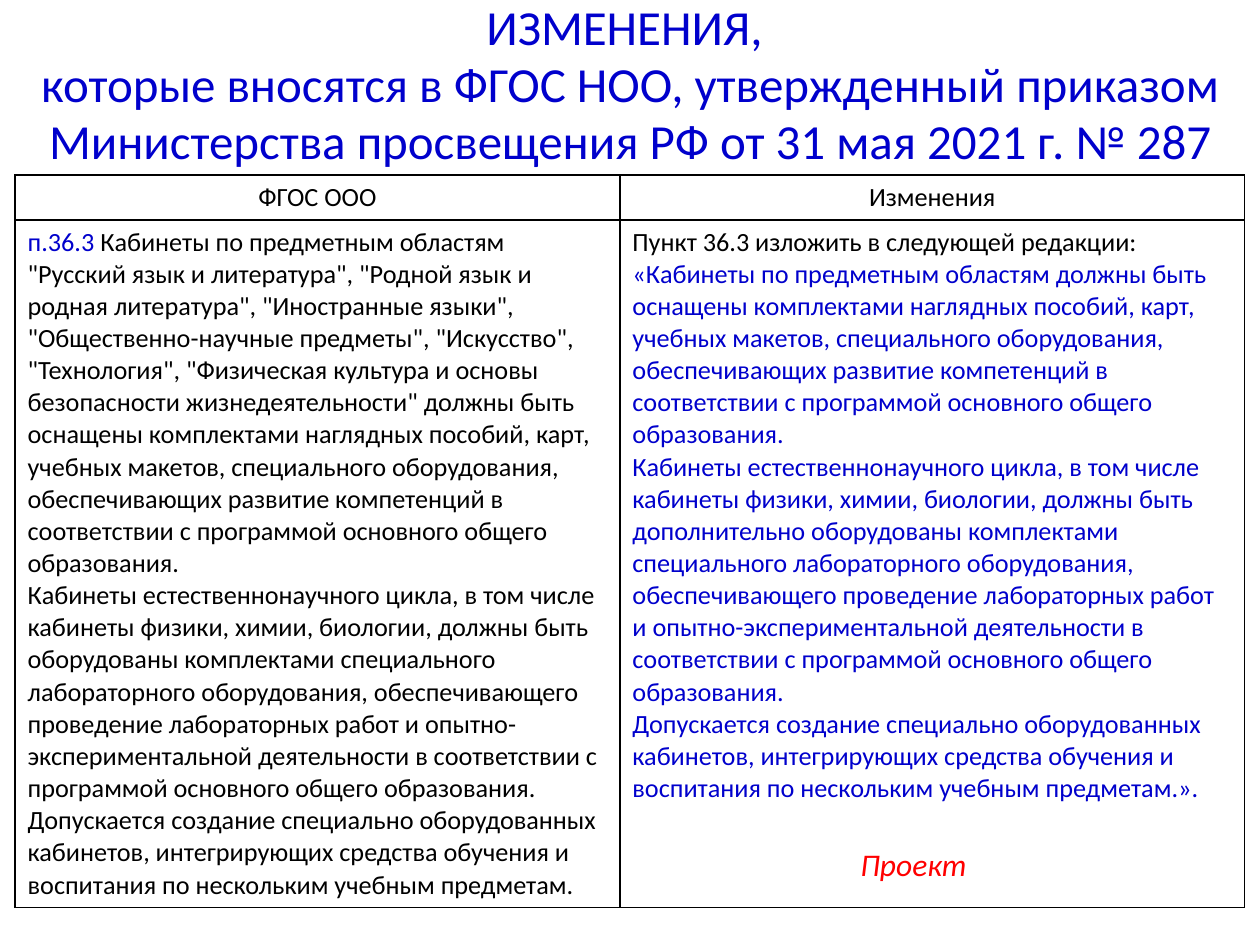
import pptx
import pptx.dml.color
import pptx.enum.text
import pptx.oxml
import pptx.oxml.ns
import pptx.util

Pt = pptx.util.Pt
ALIGN = pptx.enum.text.PP_ALIGN
ANCHOR = pptx.enum.text.MSO_ANCHOR
AUTO_SIZE = pptx.enum.text.MSO_AUTO_SIZE

FONT = "Calibri"
COLORS = {"text": "000000", "accent": "0000CC", "draft": "FF0000", "border": "000000"}

TITLE = (
    "ИЗМЕНЕНИЯ, \vкоторые вносятся в ФГОС НОО, утвержденный приказом "
    "Министерства просвещения РФ от 31 мая 2021 г. № 287"
)
HEADERS = ["ФГОС ООО", "Изменения"]

# Each paragraph is a list of (text, colour) runs
CURRENT = [
    [
        ("п.36.3 ", "accent"),
        (
            'Кабинеты по предметным областям "Русский язык и литература", '
            '"Родной язык и родная литература", "Иностранные языки", '
            '"Общественно-научные предметы", "Искусство", "Технология", '
            '"Физическая культура и основы безопасности жизнедеятельности" '
            "должны быть оснащены комплектами наглядных пособий, карт, учебных "
            "макетов, специального оборудования, обеспечивающих развитие "
            "компетенций в соответствии с программой основного общего образования.",
            "text",
        ),
    ],
    [(
        "Кабинеты естественнонаучного цикла, в том числе кабинеты физики, химии, "
        "биологии, должны быть оборудованы комплектами специального лабораторного "
        "оборудования, обеспечивающего проведение лабораторных работ и "
        "опытно-экспериментальной деятельности в соответствии с программой "
        "основного общего образования.",
        "text",
    )],
    [(
        "Допускается создание специально оборудованных кабинетов, интегрирующих "
        "средства обучения и воспитания по нескольким учебным предметам.",
        "text",
    )],
]
CHANGED = [
    [("Пункт 36.3 изложить в следующей редакции:", "text")],
    [(
        "«Кабинеты по предметным областям должны быть оснащены комплектами "
        "наглядных пособий, карт, учебных макетов, специального оборудования, "
        "обеспечивающих развитие компетенций в соответствии с программой "
        "основного общего образования.",
        "accent",
    )],
    [(
        "Кабинеты естественнонаучного цикла, в том числе кабинеты физики, химии, "
        "биологии, должны быть дополнительно оборудованы комплектами специального "
        "лабораторного оборудования, обеспечивающего проведение лабораторных работ "
        "\vи опытно-экспериментальной деятельности в соответствии с программой "
        "основного общего образования.",
        "accent",
    )],
    [(
        "Допускается создание специально оборудованных кабинетов, интегрирующих "
        "средства обучения и воспитания по нескольким учебным предметам.».",
        "accent",
    )],
]


def rgb(name):
    return pptx.dml.color.RGBColor.from_string(COLORS[name])


def place(sp, left, top, width, height):
    sp.left, sp.top, sp.width, sp.height = Pt(left), Pt(top), Pt(width), Pt(height)


def format_paragraph(p, size, color=None, align=ALIGN.LEFT, italic=False):
    p.alignment = align
    p.font.name, p.font.size, p.font.italic = FONT, Pt(size), italic
    if color:
        p.font.color.rgb = rgb(color)


def add_runs(p, runs):
    for text, color in runs:
        for i, part in enumerate(text.split("\v")):
            if i:
                p.add_line_break()
            r = p.add_run()
            r.text = part
            r.font.color.rgb = rgb(color)


def set_borders(cell, width):
    tc_pr = cell._tc.get_or_add_tcPr()
    for i, side in enumerate(("lnL", "lnR", "lnT", "lnB")):
        ln = pptx.oxml.parse_xml(
            f'<a:{side} {pptx.oxml.ns.nsdecls("a")} w="{Pt(width)}"><a:solidFill>'
            f'<a:srgbClr val="{COLORS["border"]}"/></a:solidFill></a:{side}>'
        )
        tc_pr.insert(i, ln)


def fill_cell(cell, paragraphs, align):
    cell.fill.background()
    set_borders(cell, 1)
    tf = cell.text_frame
    for i, runs in enumerate(paragraphs):
        p = tf.add_paragraph() if i else tf.paragraphs[0]
        format_paragraph(p, 15, align=align)
        add_runs(p, runs)


def add_title(s):
    sp = s.shapes.title
    place(sp, 0, 3.6, 720, 90.7)
    tf = sp.text_frame
    tf.text = TITLE
    tf.auto_size = AUTO_SIZE.NONE
    tf.vertical_anchor = ANCHOR.MIDDLE
    p = tf.paragraphs[0]
    format_paragraph(p, 28, "accent", ALIGN.CENTER)
    p.line_spacing = 0.97


def add_comparison(s):
    frame = s.shapes.add_table(2, 2, Pt(8.6), Pt(100), Pt(702.7), Pt(410.4))
    table = frame.table
    table.first_row = table.horz_banding = False
    for column, width in zip(table.columns, (345.6, 357.1)):
        column.width = Pt(width)
    for row, height in zip(table.rows, (22.4, 388)):
        row.height = Pt(height)
    for col, (header, body) in enumerate(zip(HEADERS, (CURRENT, CHANGED))):
        fill_cell(table.cell(0, col), [[(header, "text")]], ALIGN.CENTER)
        fill_cell(table.cell(1, col), body, ALIGN.LEFT)


def add_draft_mark(s):
    sp = s.shapes.add_textbox(Pt(484.6), Pt(479.5), Pt(221), Pt(29))
    tf = sp.text_frame
    tf.word_wrap = True
    tf.auto_size = AUTO_SIZE.SHAPE_TO_FIT_TEXT
    tf.text = "Проект"
    format_paragraph(tf.paragraphs[0], 18, "draft", italic=True)


def main():
    prs = pptx.Presentation()
    prs.slide_width, prs.slide_height = Pt(720), Pt(540)
    s = prs.slides.add_slide(prs.slide_layouts[5])  # title only
    add_title(s)
    add_comparison(s)
    add_draft_mark(s)
    prs.save("out.pptx")


if __name__ == "__main__":
    main()
